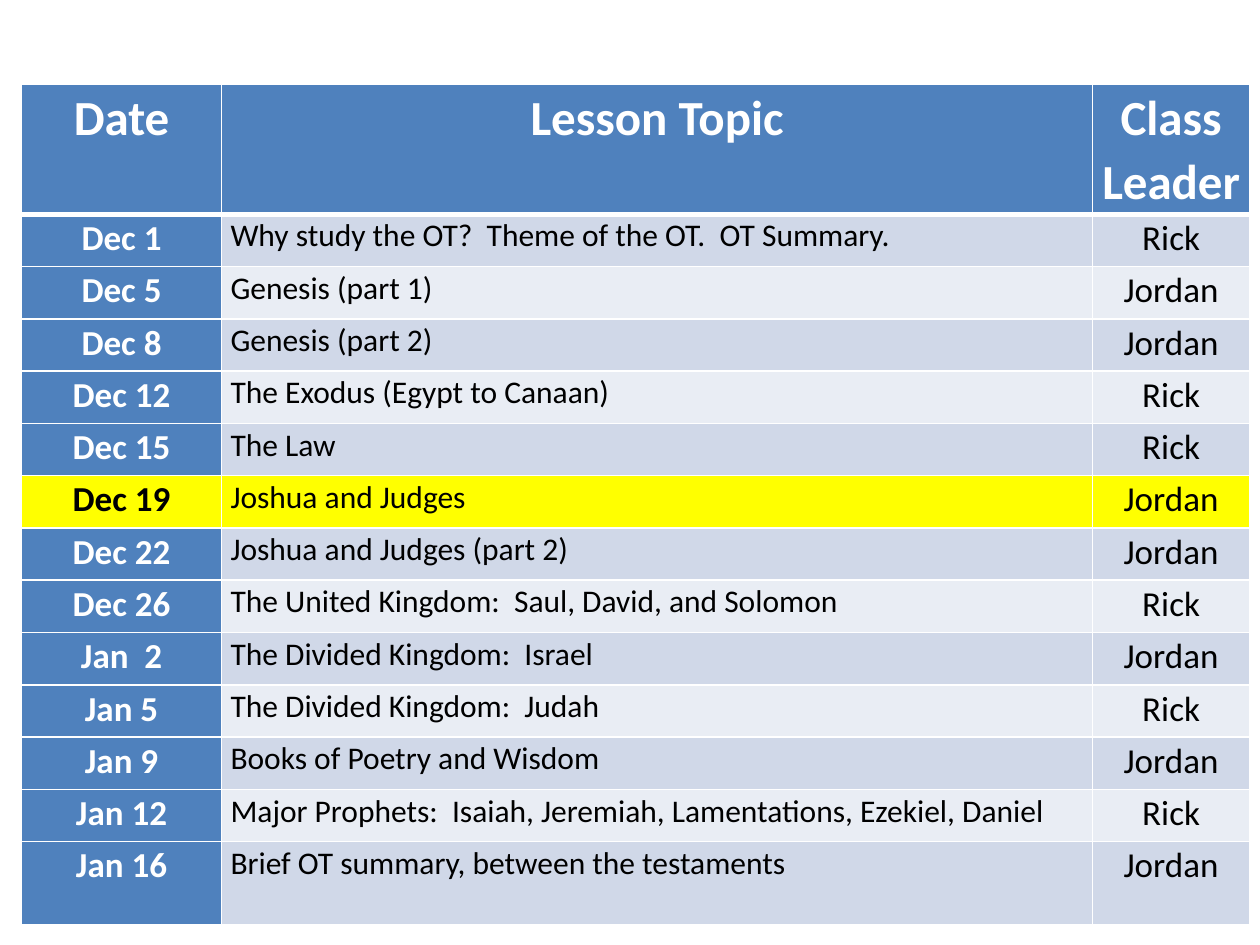
from dataclasses import dataclass

from lxml.etree import SubElement
from pptx import Presentation
from pptx.dml.color import RGBColor
from pptx.enum.text import PP_ALIGN
from pptx.oxml.ns import qn
from pptx.util import Pt

PX = 4572  # EMU in one px, 200 px to the inch


@dataclass
class Theme:
    font: str = "Calibri"
    head: str = "4F81BD"
    odd: str = "D0D8E8"
    even: str = "E9EDF4"
    mark: str = "FFFF00"
    white: str = "FFFFFF"
    black: str = "000000"
    title: int = 28
    label: int = 20
    topic: int = 18
    thin: int = 1
    thick: int = 3


theme = Theme()


def edge(cell, side, width):
    """Draw one white border of a cell; call before the fill is set."""
    line = SubElement(cell._tc.get_or_add_tcPr(), qn("a:ln" + side), w=str(Pt(width)))
    fill = SubElement(line, qn("a:solidFill"))
    SubElement(fill, qn("a:srgbClr"), val=theme.white)


# Lessons
lessons = [
    ("Date", "Lesson Topic", "Class Leader"),
    ("Dec 1", "Why study the OT?  Theme of the OT.  OT Summary.", "Rick"),
    ("Dec 5", "Genesis (part 1)", "Jordan"),
    ("Dec 8", "Genesis (part 2)", "Jordan"),
    ("Dec 12", "The Exodus (Egypt to Canaan)", "Rick"),
    ("Dec 15", "The Law", "Rick"),
    ("Dec 19", "Joshua and Judges", "Jordan"),
    ("Dec 22", "Joshua and Judges (part 2)", "Jordan"),
    ("Dec 26", "The United Kingdom:  Saul, David, and Solomon", "Rick"),
    ("Jan  2", "The Divided Kingdom:  Israel", "Jordan"),
    ("Jan 5", "The Divided Kingdom:  Judah", "Rick"),
    ("Jan 9", "Books of Poetry and Wisdom", "Jordan"),
    ("Jan 12", "Major Prophets:  Isaiah, Jeremiah, Lamentations, Ezekiel, Daniel", "Rick"),
    ("Jan 16", "Brief OT summary, between the testaments", "Jordan"),
]
today = "Dec 19"

# Slide
deck = Presentation()
deck.slide_width, deck.slide_height = 2000 * PX, 1500 * PX
slide = deck.slides.add_slide(deck.slide_layouts[6])

# Table grid
widths = [318, 1382, 250]
heights = [206] + [83] * 12 + [132]
table = slide.shapes.add_table(
    len(heights), len(widths), 34 * PX, 134 * PX, sum(widths) * PX, sum(heights) * PX
).table
for col, width in zip(table.columns, widths):
    col.width = width * PX
for row, height in zip(table.rows, heights):
    row.height = height * PX

# Cells
for r, lesson in enumerate(lessons):
    for c, text in enumerate(lesson):
        cell = table.cell(r, c)
        marked = lesson[0] == today
        bold = r == 0 or c == 0

        # Borders, with a thick rule under the header
        for side in "LRTB":
            rule = (r, side) in ((0, "B"), (1, "T"))
            edge(cell, side, theme.thick if rule else theme.thin)

        # Fill
        if marked:
            color = theme.mark
        elif bold:
            color = theme.head
        else:
            color = theme.odd if r % 2 else theme.even
        cell.fill.solid()
        cell.fill.fore_color.rgb = RGBColor.from_string(color)

        # Text
        cell.margin_left = cell.margin_right = 14 * PX
        cell.margin_top = cell.margin_bottom = 0
        para = cell.text_frame.paragraphs[0]
        para.text = text
        para.line_spacing = 1.07
        para.alignment = PP_ALIGN.LEFT if r and c == 1 else PP_ALIGN.CENTER
        font = para.runs[0].font
        font.name = theme.font
        font.bold = bold
        font.size = Pt(theme.title if r == 0 else theme.topic if c == 1 else theme.label)
        ink = theme.white if bold and not marked else theme.black
        font.color.rgb = RGBColor.from_string(ink)

deck.save("out.pptx")
